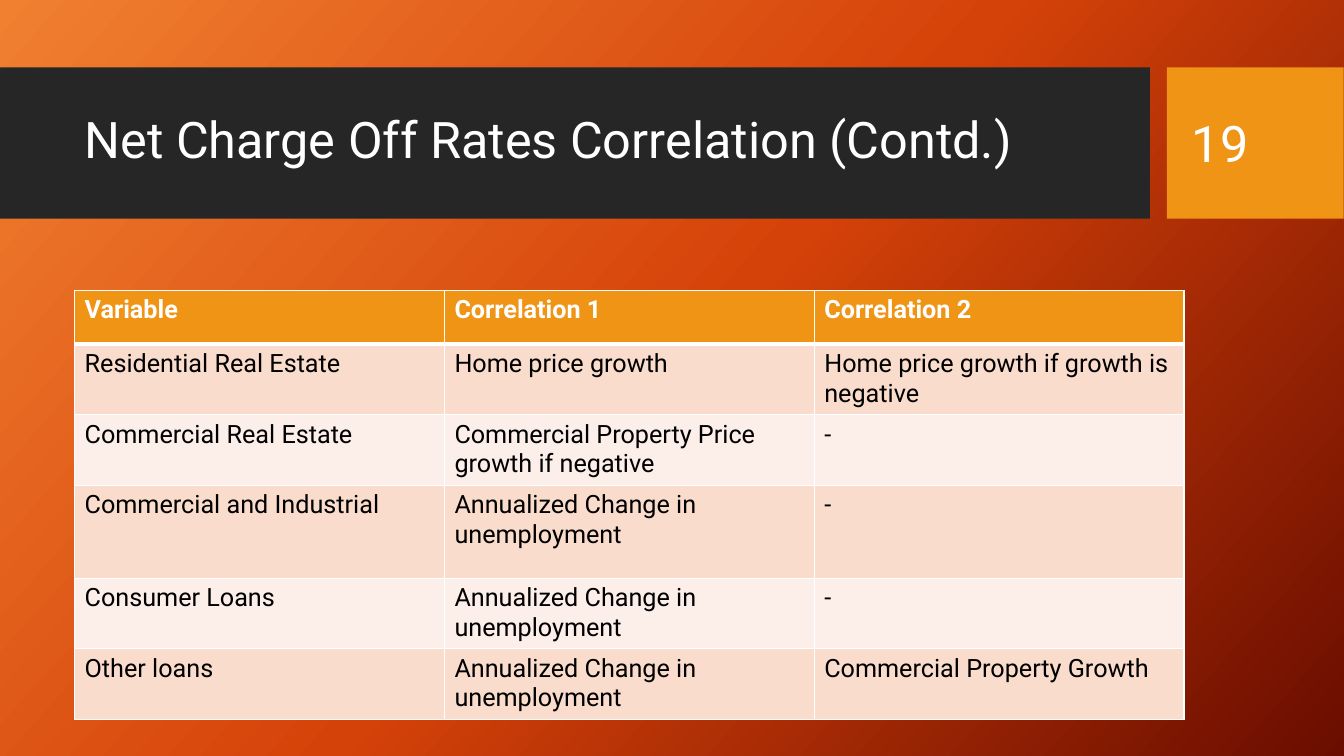
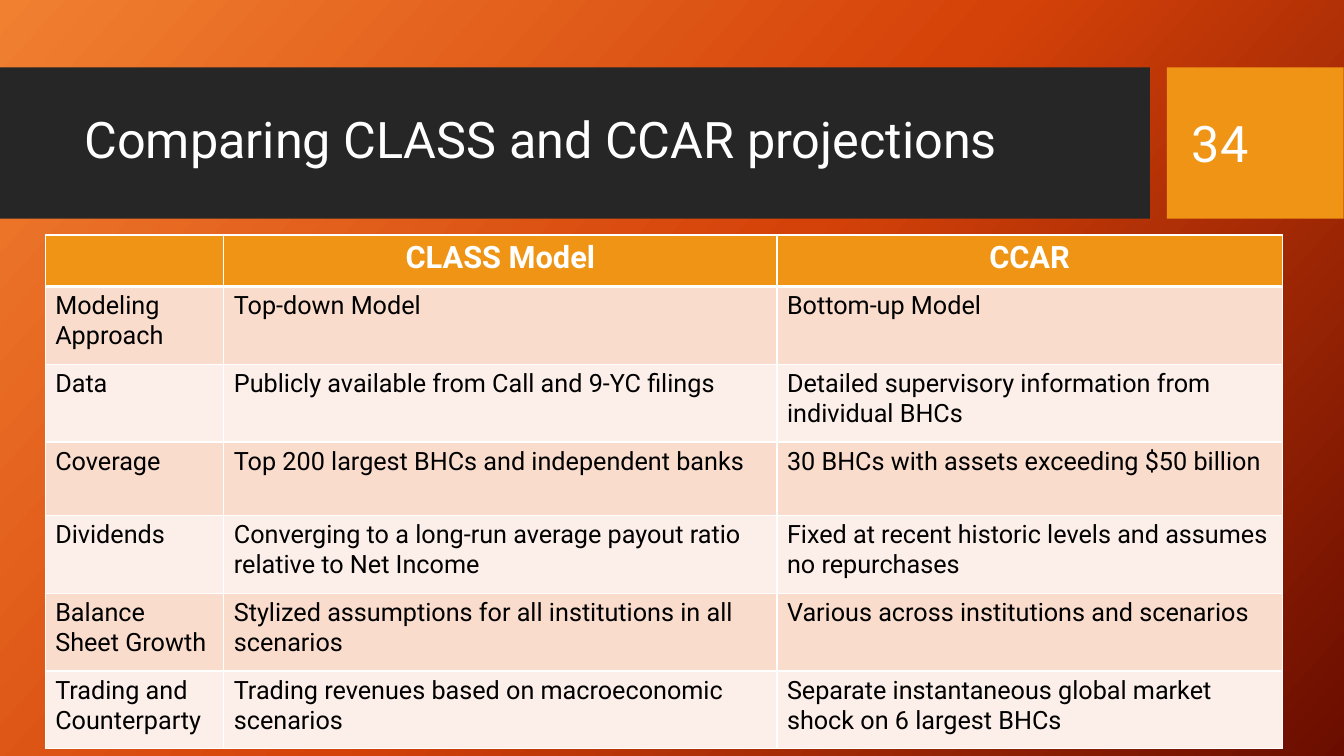
from copy import deepcopy

from lxml import etree
from pptx import Presentation
from pptx import util as u
from pptx.dml.color import RGBColor
from pptx.enum import shapes, text
from pptx.oxml import ns

FONT = "Roboto"
COLORS = {
    "white": "FFFFFF",
    "black": "000000",
    "band": "262626",
    "accent": "F09415",
    "row_dark": "F9DCCC",
    "row_light": "FCEEE8",
}
BACKGROUND_STOPS = [(0, "F18031"), (0.5, "D54209"), (1, "6A0D00")]
BAND_TOP, BAND_HEIGHT = 1.7, 3.81

CORRELATION_ROWS = [
    ["Variable", "Correlation 1", "Correlation 2"],
    ["Residential Real Estate", "Home price growth", "Home price growth if growth is negative"],
    ["Commercial Real Estate", "Commercial Property Price growth if negative", "-"],
    ["Commercial and Industrial", "Annualized Change in unemployment", "-"],
    ["Consumer Loans", "Annualized Change in unemployment", "-"],
    ["Other loans", "Annualized Change in unemployment", "Commercial Property Growth"],
]
COMPARISON_ROWS = [
    ["", "CLASS Model", "CCAR"],
    ["Modeling Approach", "Top-down Model", "Bottom-up Model"],
    ["Data", "Publicly available from Call and 9-YC filings",
     "Detailed supervisory information from individual BHCs"],
    ["Coverage", "Top 200 largest BHCs and independent banks",
     "30 BHCs with assets exceeding $50 billion"],
    ["Dividends", "Converging to a long-run average payout ratio relative to Net Income",
     "Fixed at recent historic levels and assumes no repurchases"],
    ["Balance Sheet Growth", "Stylized assumptions for all institutions in all scenarios",
     "Various across institutions and scenarios"],
    ["Trading and Counterparty", "Trading revenues based on macroeconomic scenarios",
     "Separate instantaneous global market shock on 6 largest BHCs"],
]


def rgb(name):
    return RGBColor.from_string(COLORS[name])


def set_background(master):
    fill = master.background.fill
    fill.gradient()
    fill.gradient_angle = 360 - 42
    stop_list = master.element.find(".//" + ns.qn("p:bg")).find(".//" + ns.qn("a:gsLst"))
    stop_list.append(deepcopy(stop_list[-1]))
    for stop, (position, color) in zip(fill.gradient_stops, BACKGROUND_STOPS):
        stop.position = position
        stop.color.rgb = RGBColor.from_string(color)


def style_paragraph(paragraph, size, color, bold=False):
    font = paragraph.font
    font.name, font.size, font.bold = FONT, u.Pt(size), bold
    font.color.rgb = rgb(color)


def add_band(slide, left, width, color):
    shape = slide.shapes.add_shape(
        shapes.MSO_SHAPE.RECTANGLE, u.Cm(left), u.Cm(BAND_TOP), u.Cm(width), u.Cm(BAND_HEIGHT))
    shape.shadow.inherit = False
    shape.fill.solid()
    shape.fill.fore_color.rgb = rgb(color)
    shape.line.fill.background()


def add_heading(slide, left, width, height, content, line_spacing=1.0):
    box = slide.shapes.add_textbox(u.Cm(left), u.Cm(2.08), u.Cm(width), u.Cm(height))
    frame = box.text_frame
    frame.word_wrap = True
    frame.vertical_anchor = text.MSO_ANCHOR.MIDDLE
    frame.text = content
    paragraph = frame.paragraphs[0]
    paragraph.line_spacing = line_spacing
    style_paragraph(paragraph, 36, "white")


def add_frame(presentation, title, number):
    slide = presentation.slides.add_slide(presentation.slide_layouts[6])
    add_band(slide, 0, 28.98, "band")
    add_band(slide, 29.41, 4.45, "accent")
    add_heading(slide, 1.88, 26.7, 3, title, 0.9)
    add_heading(slide, 29.79, 3.2, 3.02, number)
    return slide


def set_borders(cell, top, bottom):
    properties = cell._tc.get_or_add_tcPr()
    for side, points in (("L", 1), ("R", 1), ("T", top), ("B", bottom)):
        line = etree.SubElement(properties, ns.qn(f"a:ln{side}"), w=str(u.Pt(points)))
        fill = etree.SubElement(line, ns.qn("a:solidFill"))
        etree.SubElement(fill, ns.qn("a:srgbClr"), val=COLORS["white"])


def style_cell(cell, content, row, header_size, header_alignment):
    header = row == 0
    set_borders(cell, 3 if row == 1 else 1, 3 if header else 1)
    cell.fill.solid()
    cell.fill.fore_color.rgb = rgb("accent" if header else "row_dark" if row % 2 else "row_light")
    cell.text = content
    paragraph = cell.text_frame.paragraphs[0]
    if header:
        paragraph.alignment = header_alignment
        style_paragraph(paragraph, header_size, "white", True)
    else:
        style_paragraph(paragraph, 18, "black")


def add_data_table(slide, left, top, widths, heights, rows, header_size, header_alignment):
    table = slide.shapes.add_table(
        len(rows), len(widths), u.Cm(left), u.Cm(top),
        u.Cm(sum(widths)), u.Cm(sum(heights))).table
    for column, width in zip(table.columns, widths):
        column.width = u.Cm(width)
    for index, (row, height) in enumerate(zip(table.rows, heights)):
        row.height = u.Cm(height)
        for cell, content in zip(row.cells, rows[index]):
            style_cell(cell, content, index, header_size, header_alignment)


def main():
    presentation = Presentation()
    presentation.slide_width, presentation.slide_height = u.Cm(33.87), u.Cm(19.05)
    set_background(presentation.slide_master)

    slide = add_frame(presentation, "Net Charge Off Rates Correlation (Contd.)", "19")
    add_data_table(slide, 1.88, 7.32, [9.32] * 3, [1.35, 1.75, 1.75, 2.34, 1.75, 1.75],
                   CORRELATION_ROWS, 18, text.PP_ALIGN.LEFT)

    slide = add_frame(presentation, "Comparing CLASS and CCAR projections", "34")
    add_data_table(slide, 1.14, 5.92, [4.5, 13.94, 12.73],
                   [1.3, 1.96, 1.96, 1.85, 1.96, 1.96, 1.96],
                   COMPARISON_ROWS, 22, text.PP_ALIGN.CENTER)

    presentation.save("out.pptx")


if __name__ == "__main__":
    main()
